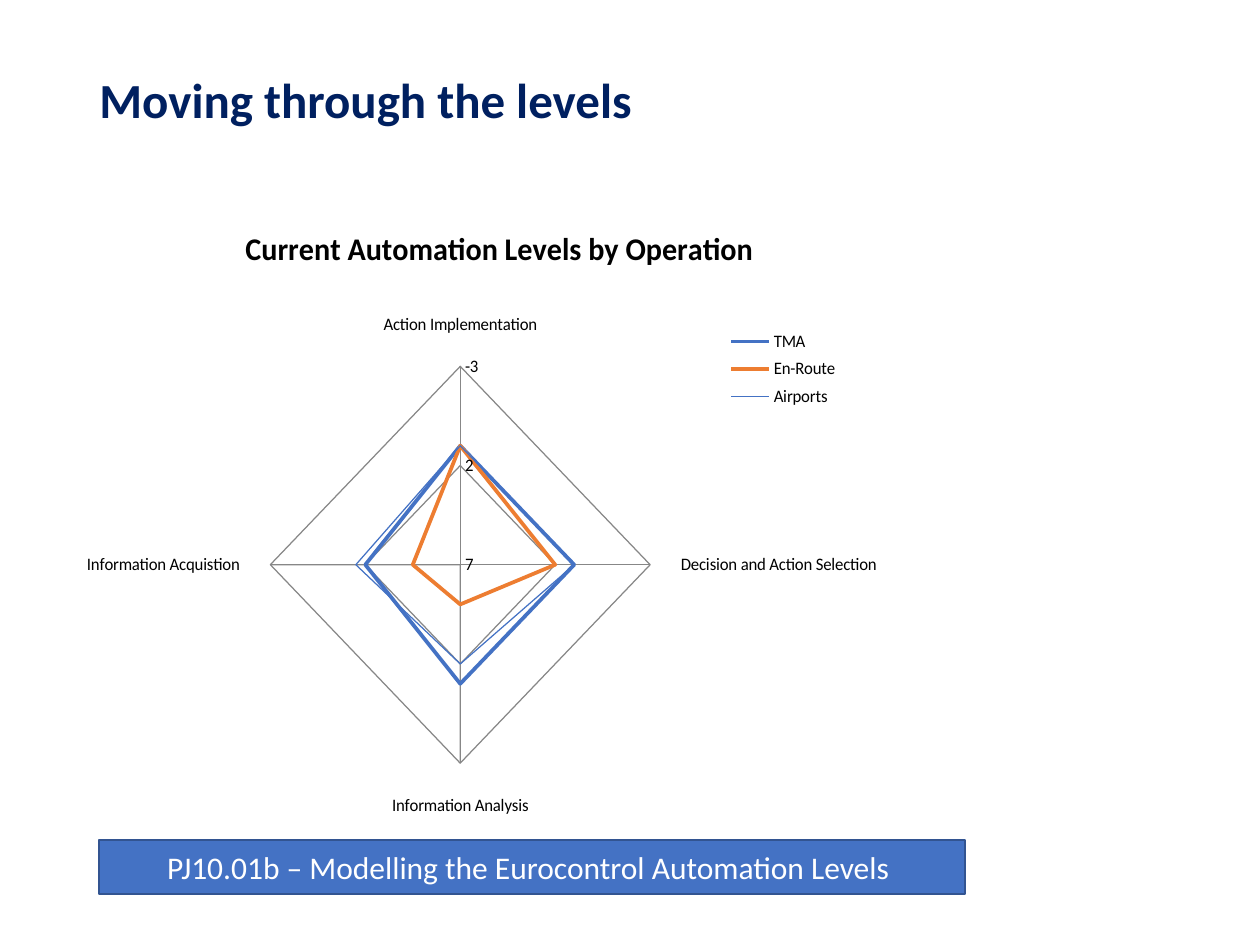
from lxml import etree
from pptx import Presentation
from pptx import util as u
from pptx.chart.data import CategoryChartData
from pptx.dml.color import RGBColor
from pptx.enum import chart as ch, shapes, text
from pptx.oxml import parse_xml
from pptx.oxml.ns import nsdecls, qn

NAVY = RGBColor(0x00, 0x20, 0x60)
BLUE = RGBColor(0x44, 0x72, 0xC4)
DARK_BLUE = RGBColor(0x32, 0x54, 0x91)
ORANGE = RGBColor(0xED, 0x7D, 0x31)
GREY = RGBColor(0x87, 0x87, 0x87)
BLACK = RGBColor(0x00, 0x00, 0x00)
WHITE = RGBColor(0xFF, 0xFF, 0xFF)
FONT = "Calibri"


def set_font(font, size, color, bold=False):
    font.name, font.size, font.bold = FONT, u.Pt(size), bold
    font.color.rgb = color


def set_layout(element, inner=False, **position):
    for old in element.findall(qn("c:layout")):
        element.remove(old)
    layout = parse_xml(f"<c:layout {nsdecls('c')}><c:manualLayout/></c:layout>")
    values = {"layoutTarget": "inner"} if inner else {}
    values.update({f"{k}Mode": "edge" for k in "xy"})
    values.update(position)
    for tag, val in values.items():
        etree.SubElement(layout[0], qn(f"c:{tag}")).set("val", str(val))
    before = [e for e in element if e.tag in (qn("c:tx"), qn("c:legendPos"))]
    element.insert(len(before), layout)


prs = Presentation()
prs.slide_width, prs.slide_height = u.Cm(25.4), u.Cm(19.05)
s = prs.slides.add_slide(prs.slide_layouts[5])

sp = s.shapes.title
sp.left, sp.top, sp.width, sp.height = u.Cm(1.75), u.Cm(1.3), u.Cm(21.9), u.Cm(1.52)
tf = sp.text_frame
tf.text = "Moving through the levels"
tf.vertical_anchor = text.MSO_ANCHOR.MIDDLE
p = tf.paragraphs[0]
p.alignment = text.PP_ALIGN.LEFT
p.line_spacing = 0.9
set_font(p.runs[0].font, 28, NAVY, True)

data = CategoryChartData()
data.categories = ["Action Implementation", "Decision and Action Selection",
                   "Information Analysis", "Information Acquistion"]
series = [("TMA", (1, 1, 1, 2), BLUE, 2.25),
          ("En-Route", (1, 2, 5, 4.5), ORANGE, 2.25),
          ("Airports", (1, 1, 2, 1.5), BLUE, 0.75)]
for name, values, color, width in series:
    data.add_series(name, values)
chart = s.shapes.add_chart(ch.XL_CHART_TYPE.RADAR, u.Cm(1.75), u.Cm(3.94),
                           u.Cm(16), u.Cm(12.95), data).chart
set_font(chart.font, 10, BLACK)

chart.has_title = True
tf = chart.chart_title.text_frame
tf.text = "Current Automation Levels by Operation"
set_font(tf.paragraphs[0].runs[0].font, 18, BLACK, True)
chart.chart_title.include_in_layout = False
title = chart.chart_title._element
set_layout(title, x=0.18, y=0.04)

chart.has_legend = True
chart.legend.position = ch.XL_LEGEND_POSITION.RIGHT
chart.legend.include_in_layout = False
set_layout(chart.legend._element, x=0.8, y=0.2, w=0.19, h=0.14)
plot = chart.plots[0]
plot.vary_by_categories = False
set_layout(plot._element.getparent(), True, x=0.22, y=0.2, w=0.5, h=0.75)

for line, (name, values, color, width) in zip(plot.series, series):
    line.smooth = False
    line.format.line.color.rgb = color
    line.format.line.width = u.Pt(width)
    line.marker.style = ch.XL_MARKER_STYLE.NONE

for axis in (chart.category_axis, chart.value_axis):
    axis.has_major_gridlines = True
    axis.major_gridlines.format.line.color.rgb = GREY
    axis.major_gridlines.format.line.width = u.Pt(0.75)
    axis.major_tick_mark = axis.minor_tick_mark = ch.XL_TICK_MARK.NONE
    set_font(axis.tick_labels.font, 10, BLACK)
chart.category_axis.format.line.fill.background()
axis = chart.value_axis
axis.minimum_scale, axis.maximum_scale, axis.major_unit = -3, 7, 5
axis.reverse_order = True
axis.tick_labels.number_format = "General"
axis.tick_labels.number_format_is_linked = False
axis.format.line.color.rgb = GREY
axis.format.line.width = u.Pt(0.75)

sp = s.shapes.add_shape(shapes.MSO_SHAPE.RECTANGLE, u.Cm(2), u.Cm(16.94), u.Cm(17.45), u.Cm(1.09))
sp.shadow.inherit = False
sp.fill.solid()
sp.fill.fore_color.rgb = BLUE
sp.line.color.rgb = DARK_BLUE
sp.line.width = u.Pt(1)
tf = sp.text_frame
tf.word_wrap = True
tf.vertical_anchor = text.MSO_ANCHOR.MIDDLE
tf.text = "PJ10.01b – Modelling the Eurocontrol Automation Levels "
p = tf.paragraphs[0]
p.alignment = text.PP_ALIGN.CENTER
set_font(p.runs[0].font, 18, WHITE)

prs.save("out.pptx")
